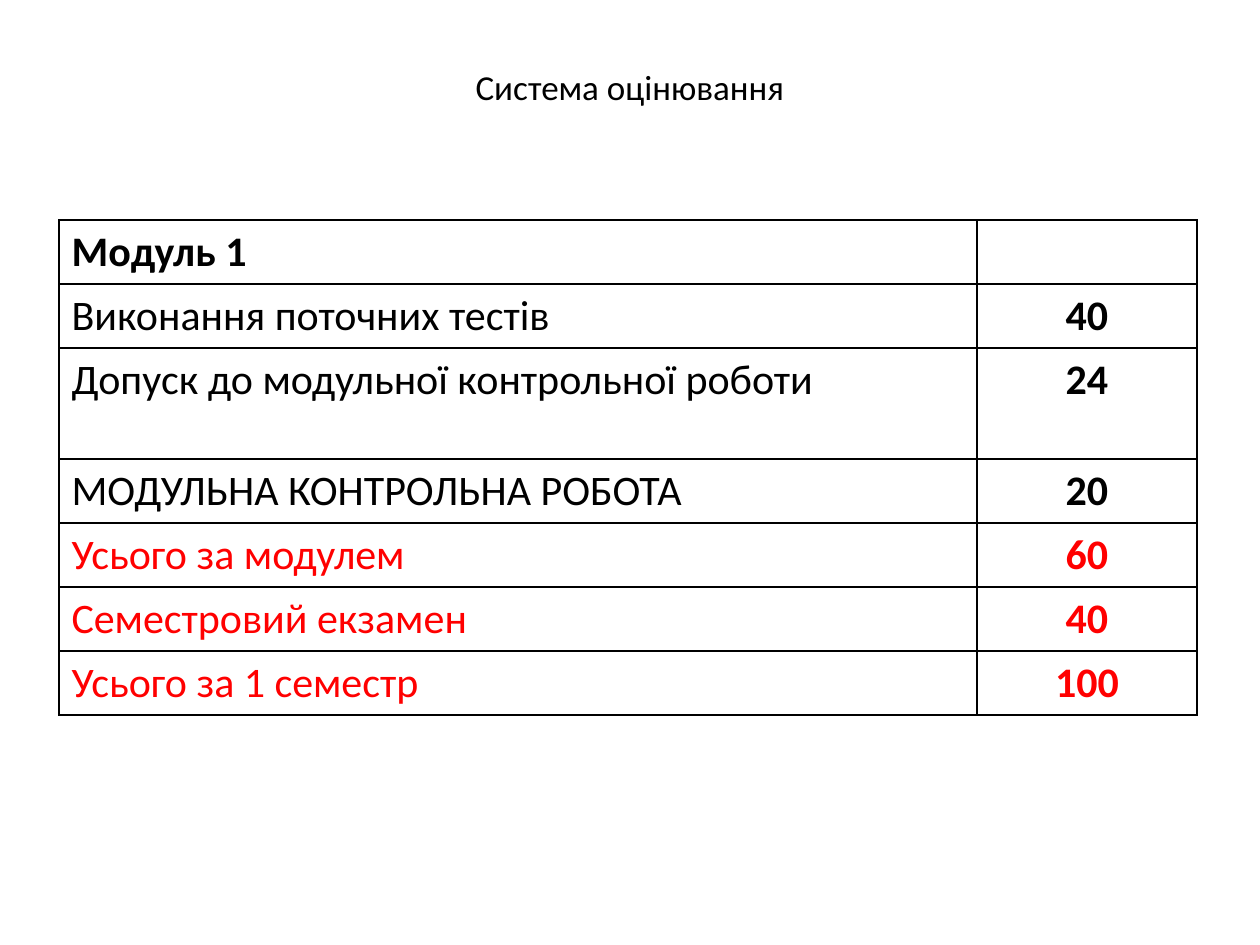
from lxml.etree import SubElement
from pptx import Presentation
from pptx.dml.color import RGBColor
from pptx.enum.text import MSO_ANCHOR as Anchor, PP_ALIGN as Align
from pptx.oxml.ns import qn
from pptx.util import Inches, Pt

BLACK = RGBColor(0, 0, 0)
RED = RGBColor(255, 0, 0)
WHITE = RGBColor(255, 255, 255)
FONT = "Calibri"

TITLE = "Система оцінювання"
# label, points, row height, colour, bold label
ROWS = [
    ("Модуль 1", "", 64, BLACK, True),
    ("Виконання поточних тестів", "40", 64, BLACK, False),
    ("Допуск до модульної контрольної роботи", "24", 111, BLACK, False),
    ("МОДУЛЬНА КОНТРОЛЬНА РОБОТА", "20", 64, BLACK, False),
    ("Усього за модулем", "60", 64, RED, False),
    ("Семестровий екзамен", "40", 64, RED, False),
    ("Усього за 1 семестр", "100", 64, RED, False),
]
COLUMN_WIDTHS = (918, 220)
TABLE_LEFT, TABLE_TOP = 59, 220
BORDER_WIDTH = Pt(1)


def px(length):
    return round(length * Inches(1) / 126)


def write(frame, text, size=24, color=BLACK, bold=False, align=Align.LEFT):
    paragraph = frame.paragraphs[0]
    paragraph.alignment = align
    paragraph.font.size = Pt(size)
    if text:
        run = paragraph.add_run()
        run.text = text
        run.font.name = FONT
        run.font.size = Pt(size)
        run.font.bold = bold
        run.font.color.rgb = color


def add_borders(cell):
    """Draw all four edges; call before the fill is set, as lines come first."""
    properties = cell._tc.get_or_add_tcPr()
    for side in ("a:lnL", "a:lnR", "a:lnT", "a:lnB"):
        line = SubElement(properties, qn(side), w=str(BORDER_WIDTH))
        fill = SubElement(line, qn("a:solidFill"))
        SubElement(fill, qn("a:srgbClr"), val=str(BLACK))


presentation = Presentation()
presentation.slide_width = px(1260)
presentation.slide_height = px(945)
slide = presentation.slides.add_slide(presentation.slide_layouts[6])

# Title
title = slide.shapes.add_textbox(px(63), px(38), px(1134), px(97)).text_frame
title.word_wrap = True
title.vertical_anchor = Anchor.MIDDLE
write(title, TITLE, size=20, align=Align.CENTER)

# Grading table
table = slide.shapes.add_table(
    len(ROWS), len(COLUMN_WIDTHS), px(TABLE_LEFT), px(TABLE_TOP),
    px(sum(COLUMN_WIDTHS)), px(sum(row[2] for row in ROWS))).table
table.first_row = table.horz_banding = False
for column, width in zip(table.columns, COLUMN_WIDTHS):
    column.width = px(width)

for row, (label, points, height, color, bold) in zip(table.rows, ROWS):
    row.height = px(height)
    label_cell, points_cell = row.cells
    for cell in (label_cell, points_cell):
        add_borders(cell)
        cell.fill.solid()
        cell.fill.fore_color.rgb = WHITE
    write(label_cell.text_frame, label, color=color, bold=bold)
    write(points_cell.text_frame, points, color=color, bold=True,
          align=Align.CENTER)

presentation.save("out.pptx")
